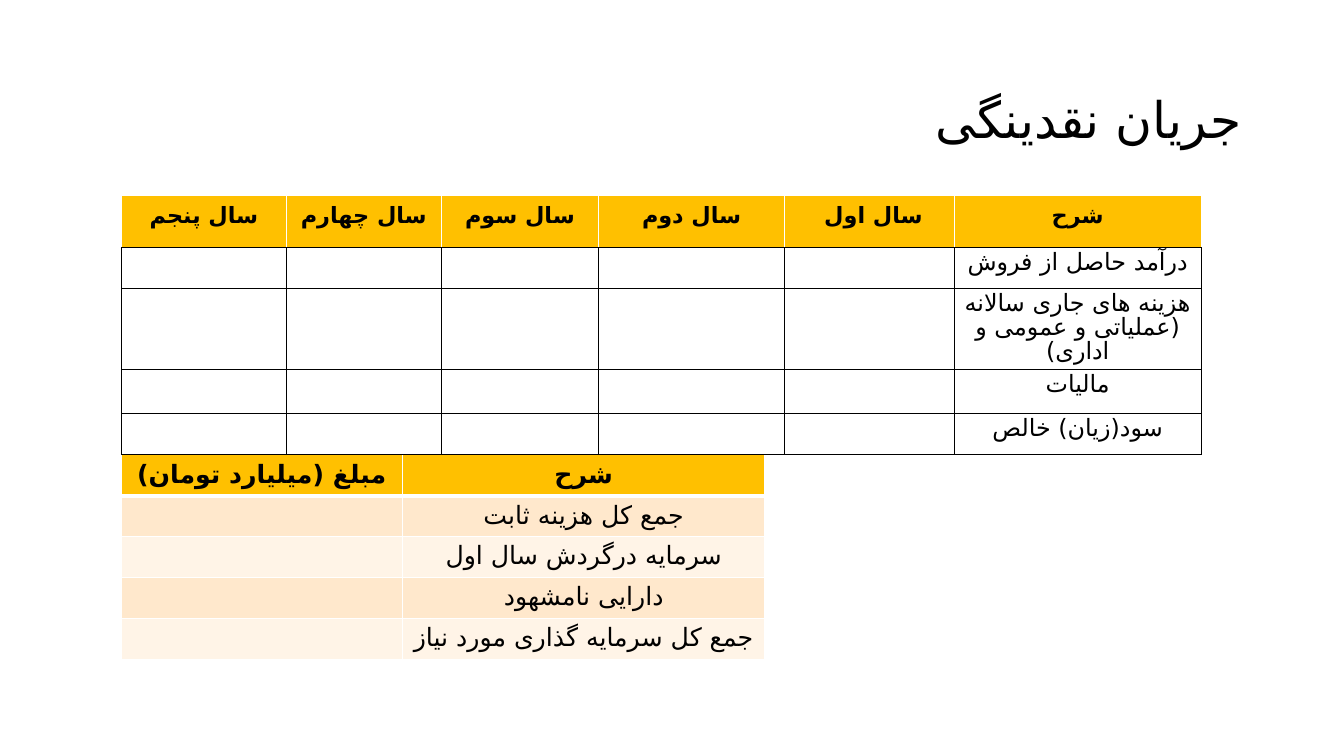
from dataclasses import dataclass

from lxml import etree
from pptx import Presentation
from pptx.dml.color import RGBColor
from pptx.enum.text import MSO_ANCHOR, PP_ALIGN
from pptx.oxml.ns import qn
from pptx.util import Cm, Pt

CENTER, RIGHT = PP_ALIGN.CENTER, PP_ALIGN.RIGHT
MIDDLE = MSO_ANCHOR.MIDDLE
PERSIAN_FONT = "DejaVu Sans"
COLORS = {"text": "000000", "header": "FFC000", "dark_band": "FFE8CC",
          "light_band": "FFF4E7", "white": "FFFFFF", "black": "000000"}


@dataclass
class TextStyle:
    font: dict
    paragraph: dict


@dataclass
class Border:
    color: str
    width: float = 1


@dataclass
class TableSpec:
    left: float
    top: float
    columns: list[float]
    heights: list[float]
    rows: list[list[str]]
    header: TextStyle
    body: TextStyle
    bands: list[str]
    grid: Border
    header_bottom: Border


def rgb(name: str) -> RGBColor:
    return RGBColor.from_string(COLORS[name])


def write(p, text: str, style: TextStyle) -> None:
    """Write one right-to-left line of text."""
    for name, value in style.paragraph.items():
        setattr(p, name, value)
    p._p.get_or_add_pPr().set("rtl", "1")
    r = p.add_run()
    r.text = text
    for name, value in style.font.items():
        setattr(r.font, name, value)
    r.font.color.rgb = rgb("text")
    etree.SubElement(r._r.get_or_add_rPr(), qn("a:cs"), typeface=PERSIAN_FONT)


def set_borders(cell, sides: dict[str, Border]) -> None:
    tc_pr = cell._tc.get_or_add_tcPr()
    for side in "LRTB":
        border = sides[side]
        ln = etree.SubElement(tc_pr, qn(f"a:ln{side}"), w=str(Pt(border.width)))
        fill = etree.SubElement(ln, qn("a:solidFill"))
        etree.SubElement(fill, qn("a:srgbClr"), val=COLORS[border.color])


def add_table(s, spec: TableSpec) -> None:
    frame = s.shapes.add_table(
        len(spec.rows), len(spec.columns), Cm(spec.left), Cm(spec.top),
        Cm(sum(spec.columns)), Cm(sum(spec.heights)))
    table = frame.table
    for column, width in zip(table.columns, spec.columns):
        column.width = Cm(width)
    for row, height in zip(table.rows, spec.heights):
        row.height = Cm(height)
    white = Border("white")
    for i, texts in enumerate(spec.rows):
        for j, text in enumerate(texts):
            cell = table.cell(i, j)
            sides = dict.fromkeys("LRTB", spec.grid if i else white)
            if i == 0:
                sides["B"] = spec.header_bottom
            elif i == 1:
                sides["T"] = spec.header_bottom
            set_borders(cell, sides)
            band = spec.bands[(i - 1) % len(spec.bands)] if i else "header"
            cell.fill.solid()
            cell.fill.fore_color.rgb = rgb(band)
            if text:
                write(cell.text_frame.paragraphs[0], text,
                      spec.body if i else spec.header)


def add_title(s, text: str) -> None:
    sp = s.shapes.add_textbox(Cm(2.33), Cm(1.24), Cm(29.21), Cm(3.68))
    tf = sp.text_frame
    tf.word_wrap = True
    tf.vertical_anchor = MIDDLE
    write(tf.paragraphs[0], text, TextStyle(
        {"name": "Calibri", "size": Pt(36)},
        {"alignment": RIGHT, "line_spacing": 0.9}))


def serif(bold: bool) -> TextStyle:
    return TextStyle({"name": "Times New Roman", "size": Pt(18), "bold": bold},
                     {"alignment": CENTER})


INVESTMENT = TableSpec(
    left=3.05, top=11.46, columns=[7.09, 9.14], heights=[1.03] * 5,
    rows=[["مبلغ (میلیارد تومان)", "شرح"]] + [["", item] for item in (
        "جمع کل هزینه ثابت", "سرمایه درگردش سال اول", "دارایی نامشهود",
        "جمع کل سرمایه گذاری مورد نیاز")],
    header=serif(True), body=serif(False),
    bands=["dark_band", "light_band"],
    grid=Border("white"), header_bottom=Border("white", 3))

CASH_FLOW = TableSpec(
    left=3.07, top=4.93, columns=[4.14, 3.92, 3.95, 4.7, 4.27, 6.22],
    heights=[1.31, 1.02, 2.04, 1.1, 1.04],
    rows=[["سال پنجم", "سال چهارم", "سال سوم", "سال دوم", "سال اول ", "شرح"]]
    + [[""] * 5 + [item] for item in (
        "درآمد حاصل از فروش ",
        "هزینه های جاری سالانه (عملیاتی و عمومی و اداری)",
        "مالیات", "سود(زیان) خالص")],
    header=TextStyle(
        {"name": "Calibri", "size": Pt(16), "bold": True},
        {"alignment": CENTER, "line_spacing": 1.07, "space_after": Pt(8)}),
    body=TextStyle(
        {"name": "Calibri", "size": Pt(17), "bold": False},
        {"alignment": CENTER, "line_spacing": Pt(17)}),
    bands=["white"], grid=Border("black"), header_bottom=Border("black"))


def main() -> None:
    prs = Presentation()
    prs.slide_width, prs.slide_height = Cm(33.87), Cm(19.05)
    s = prs.slides.add_slide(prs.slide_layouts[6])
    # Title
    add_title(s, "جریان نقدینگی")
    # Investment and yearly cash flow
    for spec in (INVESTMENT, CASH_FLOW):
        add_table(s, spec)
    prs.save("out.pptx")


if __name__ == "__main__":
    main()
